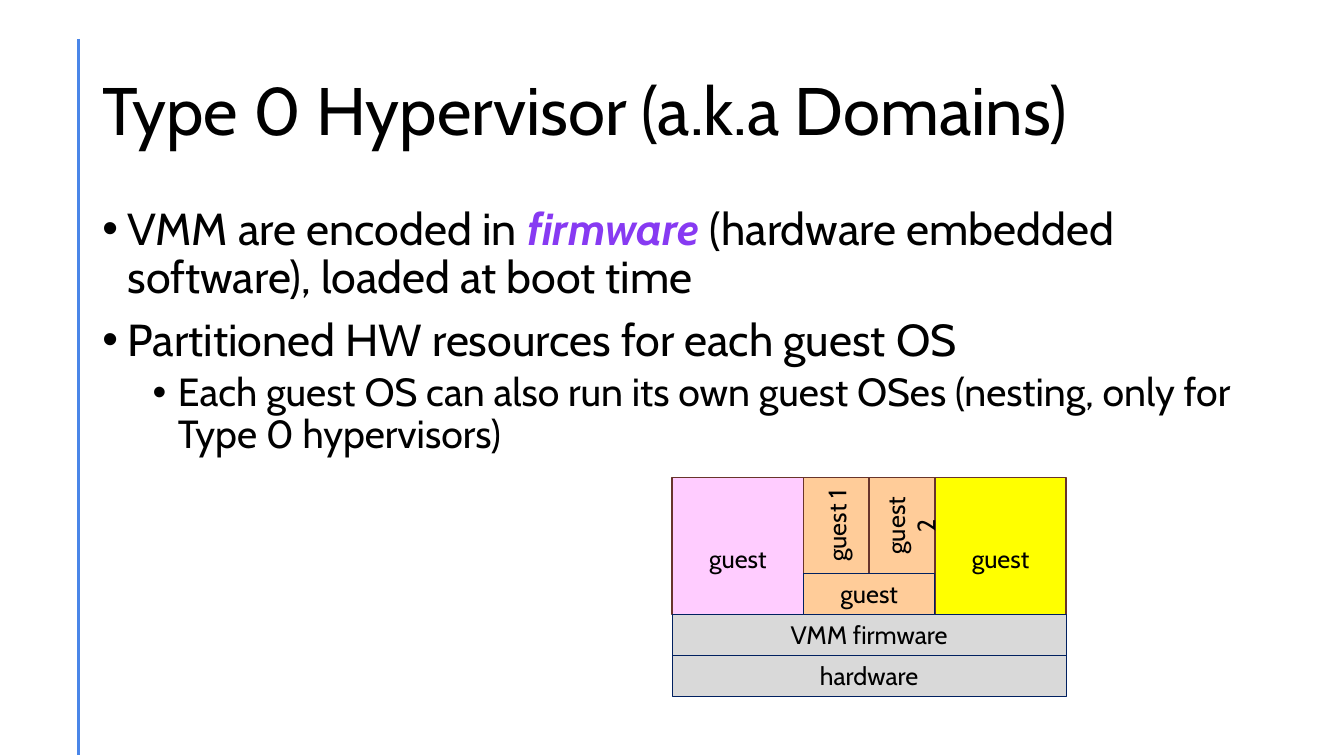
from lxml import etree
from pptx import Presentation
from pptx import util as u
from pptx.dml import color
from pptx.enum import shapes, text
from pptx.oxml import ns

THEME = {
    "font": "Cabin",
    "size": {"title": 48, "point": 32, "subpoint": 28, "label": 18},
    "color": {
        "ink": "000000", "accent": "873AF2", "rule": "4A86E8",
        "brown": "68342B", "navy": "002060", "orange": "FFCC99",
        "yellow": "FFFF00", "pink": "FFCCFF", "grey": "D9D9D9",
    },
}


def write(paragraph, runs, size):
    for wording, ink, emphasis in runs:
        run = paragraph.add_run()
        run.text = wording
        formats = {"name": THEME["font"], "size": u.Pt(THEME["size"][size]),
                   "bold": emphasis, "italic": emphasis}
        for attribute, value in formats.items():
            setattr(run.font, attribute, value)
        run.font.color.rgb = color.RGBColor.from_string(THEME["color"][ink])


def block(left, top, width, height, wording="", fill=None, edge=None, weight=1, vert="horz"):
    bounds = [u.Cm(length) for length in (left, top, width, height)]
    if fill:
        part = slide.shapes.add_shape(shapes.MSO_SHAPE.RECTANGLE, *bounds)
        part.shadow.inherit = False
        part.fill.solid()
        part.fill.fore_color.rgb = color.RGBColor.from_string(THEME["color"][fill])
        part.line.color.rgb = color.RGBColor.from_string(THEME["color"][edge])
        part.line.width = u.Pt(weight)
    else:
        part = slide.shapes.add_textbox(*bounds)
    frame = part.text_frame
    formats = {"word_wrap": True, "vertical_anchor": text.MSO_ANCHOR.TOP}
    for attribute, value in formats.items():
        setattr(frame, attribute, value)
    frame._txBody.bodyPr.set("vert", vert)
    if wording:
        frame.paragraphs[0].alignment = text.PP_ALIGN.CENTER
        write(frame.paragraphs[0], [(wording, "ink", False)], "label")
    return frame


deck = Presentation()
deck.slide_width, deck.slide_height = u.Cm(33.87), u.Cm(19.05)
slide = deck.slides.add_slide(deck.slide_layouts[6])

rule = slide.shapes.add_connector(
    shapes.MSO_CONNECTOR.STRAIGHT, u.Cm(1.98), u.Cm(0.98), u.Cm(1.98), u.Cm(19.03))
rule.line.color.rgb = color.RGBColor.from_string(THEME["color"]["rule"])
rule.line.width = u.Pt(2)
etree.SubElement(rule._element.spPr, ns.qn("a:effectLst"))

title = block(2.33, 1.02, 29.21, 3.68)
title.vertical_anchor = text.MSO_ANCHOR.MIDDLE
title.paragraphs[0].line_spacing = 0.9
write(title.paragraphs[0], [("Type 0 Hypervisor (a.k.a Domains)", "ink", False)], "title")

points = [
    (0, "point", [("VMM are encoded in ", "ink", False),
                  ("firmware", "accent", True),
                  (" (hardware embedded software), loaded at boot time", "ink", False)]),
    (0, "point", [("Partitioned HW resources for each guest OS", "ink", False)]),
    (1, "subpoint", [("Each guest OS can also run its own guest OSes "
                      "(nesting, only for Type 0 hypervisors)", "ink", False)]),
]
body = block(2.33, 5.08, 29.21, 12.09)
for number, (level, size, runs) in enumerate(points):
    point = body.add_paragraph() if number else body.paragraphs[0]
    formats = {"level": level, "line_spacing": 0.9, "space_before": u.Pt(5 if level else 10)}
    for attribute, value in formats.items():
        setattr(point, attribute, value)
    properties = point._p.get_or_add_pPr()
    properties.set("marL", str(u.Cm(0.635 + 1.27 * level)))
    properties.set("indent", str(u.Cm(-0.635)))
    etree.SubElement(properties, ns.qn("a:buFont"), typeface="Arial")
    etree.SubElement(properties, ns.qn("a:buChar"), char="•")
    write(point, runs, size)

left, top, column, row = 16.94, 12.04, 3.31, 1.03
nested_height = 2.42
guest_height = nested_height + row
base = top + guest_height

for half in (1, 0):
    block(left + column * (1 + half / 2), top, column / 2, nested_height,
          fill="orange", edge="brown")
for place, fill in ((2, "yellow"), (0, "pink")):
    block(left + place * column, top, column, guest_height, fill=fill, edge="brown")
    block(left + place * column, 13.56, column, row, "guest")
for layer, wording in enumerate(("VMM firmware", "hardware")):
    block(left, base + layer * row, 3 * column, row, wording, "grey", "navy", 0.75)
block(left + column, top + nested_height, column, row, "guest", "orange", "navy", 0.75)
for nested in (0, 1):
    block(20.57 + 1.48 * nested, top, 1.27, nested_height,
          f"guest {nested + 1}", vert="vert270")

deck.save("out.pptx")
